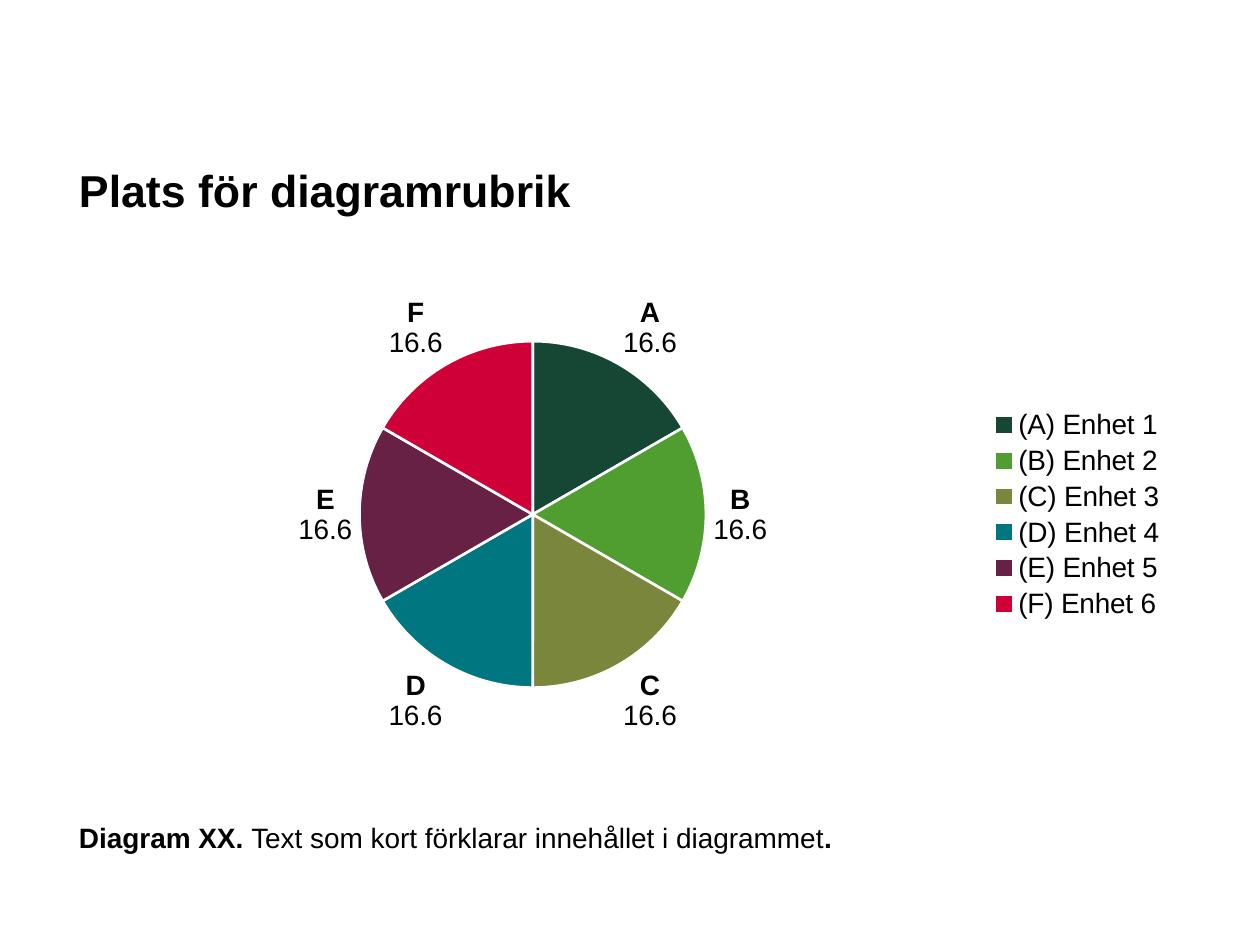
from lxml import etree
from pptx import Presentation
from pptx import util as u
from pptx.chart.data import CategoryChartData
from pptx.dml.color import RGBColor
from pptx.enum import chart as ch, text as tx
from pptx.oxml.ns import qn

SCALE = 914400 // 126
FONT = "Arial"
BLACK = "000000"
COLORS = ["154734", "509E2F", "79863B", "007681", "672145", "CE0037"]
SHARE = 16.6


def px(n):
    return u.Emu(n * SCALE)


def tint(hue):
    return RGBColor.from_string(hue)


def style(font, size, bold=False, hue=BLACK):
    font.name = FONT
    font.size = u.Pt(size)
    font.bold = bold
    font.color.rgb = tint(hue)


def write(slide, box, runs, size, anchor=tx.MSO_ANCHOR.TOP, line=None):
    """Add a text box; runs is a list of (text, bold) pairs."""
    frame = slide.shapes.add_textbox(*map(px, box)).text_frame
    frame.word_wrap = True
    frame.vertical_anchor = anchor
    frame.margin_left = frame.margin_right = 0
    frame.margin_top = frame.margin_bottom = 0
    para = frame.paragraphs[0]
    if line:
        para.line_spacing = u.Pt(line)
    for words, bold in runs:
        run = para.add_run()
        run.text = words
        style(run.font, size, bold)


def set_plot(chart, **parts):
    """Fix the inner plot area as fractions of the chart box."""
    area = chart.plots[0]._element.getparent()
    layout = area.find(qn("c:layout"))
    if layout is None:
        layout = etree.Element(qn("c:layout"))
        area.insert(0, layout)
    manual = etree.SubElement(layout, qn("c:manualLayout"))
    marks = {"layoutTarget": "inner", "xMode": "edge", "yMode": "edge"}
    for tag, val in {**marks, **parts}.items():
        etree.SubElement(manual, qn("c:" + tag)).set("val", str(val))


def label_point(point, letter):
    label = point.data_label
    frame = label.text_frame
    for i, words in enumerate((letter, str(SHARE))):
        para = frame.add_paragraph() if i else frame.paragraphs[0]
        run = para.add_run()
        run.text = words
        style(run.font, 16, bold=i == 0)
    label.position = ch.XL_LABEL_POSITION.OUTSIDE_END


def add_pie(slide, box):
    letters = "ABCDEF"
    data = CategoryChartData()
    data.categories = [f"({c}) Enhet {i}" for i, c in enumerate(letters, 1)]
    data.add_series("Series 1", [SHARE] * len(letters))
    chart = slide.shapes.add_chart(
        ch.XL_CHART_TYPE.PIE, *map(px, box), data).chart
    style(chart.font, 16)
    chart.has_title = False
    chart.has_legend = True
    chart.legend.position = ch.XL_LEGEND_POSITION.RIGHT
    chart.legend.include_in_layout = False
    style(chart.legend.font, 16)

    plot = chart.plots[0]
    plot.vary_by_categories = True
    series = plot.series[0]
    labels = series.data_labels
    labels.show_value = True
    labels.position = ch.XL_LABEL_POSITION.OUTSIDE_END
    style(labels.font, 16)
    for i, (letter, hue) in enumerate(zip(letters, COLORS)):
        point = series.points[i]
        point.format.fill.solid()
        point.format.fill.fore_color.rgb = tint(hue)
        point.format.line.color.rgb = tint("FFFFFF")
        point.format.line.width = u.Pt(1.5)
        label_point(point, letter)
    set_plot(chart, x=0.255, y=0.145, w=0.315, h=0.71)


def main():
    deck = Presentation()
    deck.slide_width, deck.slide_height = px(1260), px(945)
    slide = deck.slides.add_slide(deck.slide_layouts[6])
    left, wide = 79, 1100
    write(slide, (left, 169, wide, 60), [("Plats för diagramrubrik", True)],
          25.5, line=27)
    add_pie(slide, (left, 270, wide, 489))
    write(slide, (left, 798, wide, 78),
          [("Diagram XX. ", True),
           ("Text som kort förklarar innehållet i diagrammet", False),
           (".", True)], 16, anchor=tx.MSO_ANCHOR.MIDDLE)
    deck.save("out.pptx")


if __name__ == "__main__":
    main()
